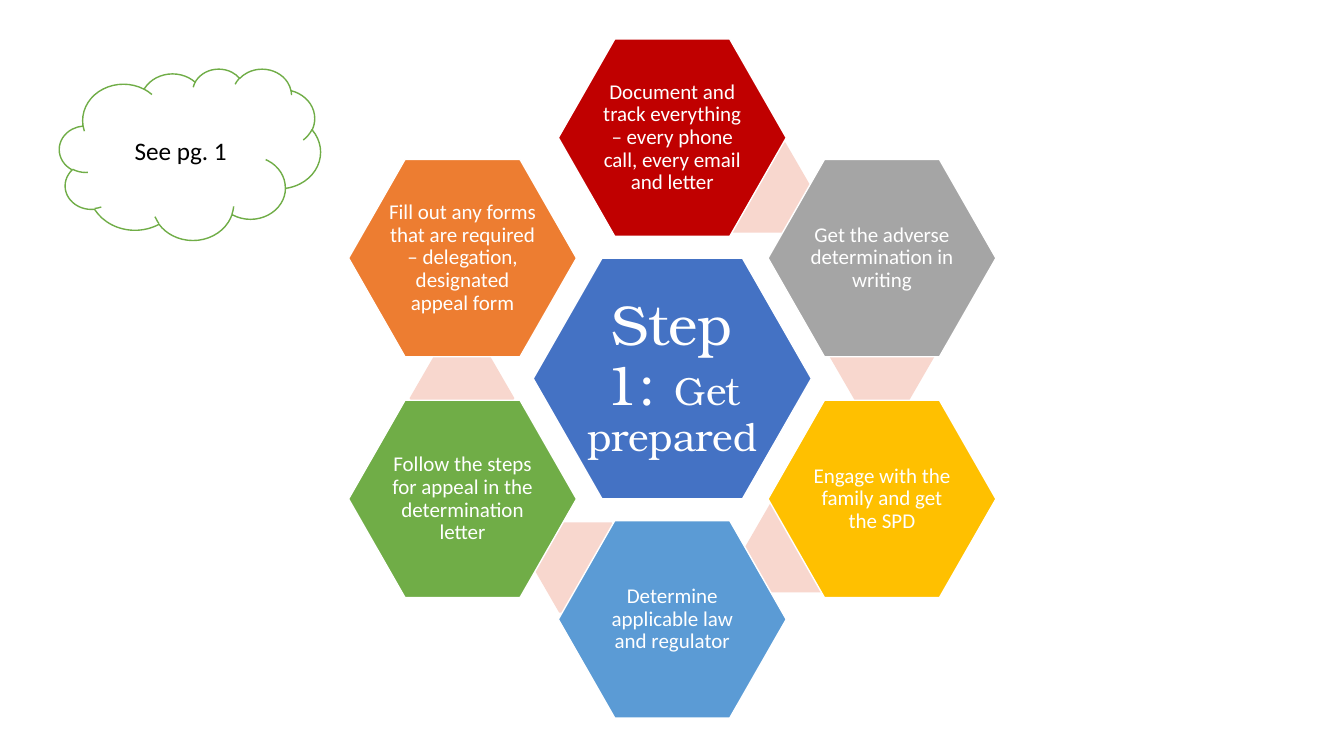
from pptx import Presentation
from pptx.dml.color import RGBColor
from pptx.enum.shapes import MSO_SHAPE
from pptx.enum.text import MSO_ANCHOR, PP_ALIGN
from pptx.util import Pt

HEXAGON, CLOUD = MSO_SHAPE.HEXAGON, MSO_SHAPE.CLOUD
MIDDLE, CENTER = MSO_ANCHOR.MIDDLE, PP_ALIGN.CENTER
BLANK_LAYOUT = 6

CENTER_X, CENTER_Y = 480.2, 270.4
RING_RADIUS, COLUMN_OFFSET = 172, 149.8
STEP_SIZE = (162.8, 141)
LINK_SIZE = (74.8, 64.5)

# text, fill, column and row on the ring, offset of the link behind the step
STEPS = [
    ("Document and track everything – every phone call, every email and letter",
     "C00000", 0, -1, (62, -136.5)),
    ("Get the adverse determination in writing",
     "A5A5A5", 1, -0.5, (149.8, -15.5)),
    ("Engage with the family and get the SPD",
     "FFC000", 1, 0.5, (89.2, 120.6)),
    ("Determine applicable law and regulator",
     "5B9BD5", 0, 1, (-62, 135)),
    ("Follow the steps for appeal in the determination letter",
     "70AD47", -1, 0.5, (-150.2, 14)),
    ("Fill out any forms that are required – delegation, designated appeal form",
     "ED7D31", -1, -0.5, None),
]


def rgb(value):
    return RGBColor.from_string(value)


class StepDiagram:
    white, black, link_fill, accent = "FFFFFF", "000000", "F8D7CE", "70AD47"
    body_font, heading_font = "Calibri", "TeX Gyre Bonum"

    def __init__(self, slide):
        self.slide = slide

    def shape(self, preset, x, y, size, fill, line=None):
        """Add a preset shape whose centre lies at x, y."""
        width, height = size
        shape = self.slide.shapes.add_shape(
            preset, Pt(x - width / 2), Pt(y - height / 2), Pt(width), Pt(height))
        shape.shadow.inherit = False
        shape.fill.solid()
        shape.fill.fore_color.rgb = rgb(fill)
        if line:
            shape.line.color.rgb = rgb(line)
            shape.line.width = Pt(1)
        else:
            shape.line.fill.background()
        return shape

    def label(self, shape, runs, font, color, inset=None, spacing=None):
        """Fill a shape with one centred paragraph of (text, size) runs."""
        frame = shape.text_frame
        frame.word_wrap = True
        frame.vertical_anchor = MIDDLE
        if inset is not None:
            frame.margin_left = frame.margin_right = Pt(inset)
            frame.margin_top = frame.margin_bottom = Pt(inset)
        paragraph = frame.paragraphs[0]
        paragraph.alignment = CENTER
        paragraph.line_spacing = spacing
        for text, size in runs:
            run = paragraph.add_run()
            run.text = text
            run.font.name = font
            run.font.size = Pt(size)
            run.font.color.rgb = rgb(color)

    def hexagon(self, x, y, size, fill, runs, font, inset):
        hexagon = self.shape(HEXAGON, x, y, size, fill, self.white)
        hexagon.adjustments[0] = 0.286
        self.label(hexagon, runs, font, self.white, inset, 0.9)

    def link(self, x, y):
        link = self.shape(HEXAGON, x, y, LINK_SIZE, self.link_fill)
        link.adjustments[0] = 0.289

    def hub(self, runs):
        self.hexagon(CENTER_X, CENTER_Y, (198.7, 172), "4472C4", runs,
                     self.heading_font, 4)

    def step(self, text, fill, column, row, link_offset):
        if link_offset:
            self.link(CENTER_X + link_offset[0], CENTER_Y + link_offset[1])
        self.hexagon(CENTER_X + column * COLUMN_OFFSET,
                     CENTER_Y + row * RING_RADIUS,
                     STEP_SIZE, fill, [(text, 15)], self.body_font, 1.5)

    def cloud(self, x, y, size, text):
        cloud = self.shape(CLOUD, x, y, size, self.white, self.accent)
        self.label(cloud, [(text, 18)], self.body_font, self.black)


def main():
    deck = Presentation()
    deck.slide_width, deck.slide_height = Pt(960), Pt(540)
    diagram = StepDiagram(deck.slides.add_slide(deck.slide_layouts[BLANK_LAYOUT]))
    diagram.hub([("Step 1: ", 40), ("Get prepared", 28)])
    for step in STEPS:
        diagram.step(*step)
    diagram.cloud(135.7, 110.2, (186.5, 122.4), "See pg. 1")
    deck.save("out.pptx")


if __name__ == "__main__":
    main()
